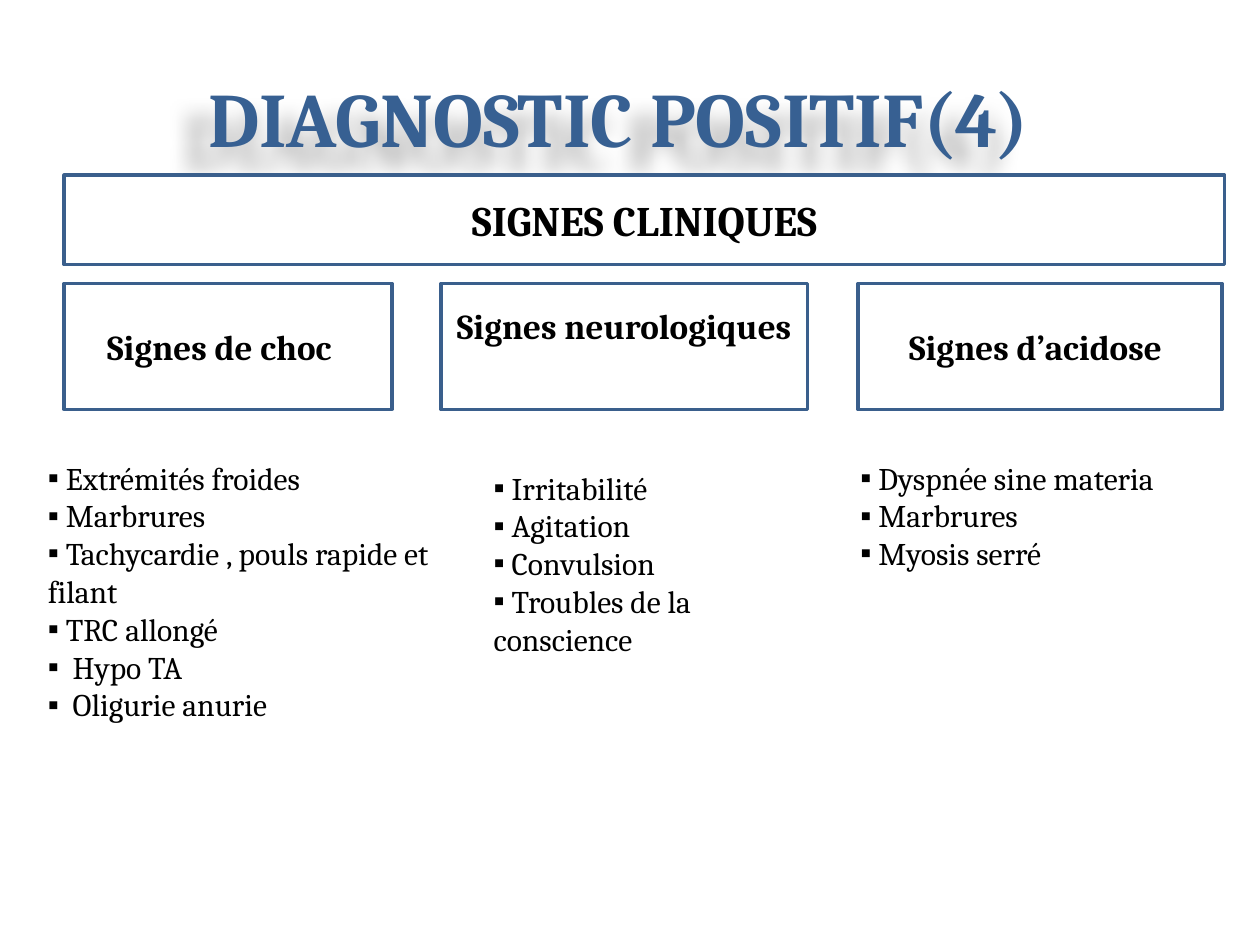
from dataclasses import dataclass

from lxml.etree import SubElement
from pptx import Presentation
from pptx.dml.color import RGBColor
from pptx.enum.shapes import MSO_SHAPE
from pptx.enum.text import MSO_ANCHOR, PP_ALIGN
from pptx.oxml.ns import qn
from pptx.util import Pt


@dataclass(frozen=True)
class Theme:
    font: str = "Cambria"
    title_color: RGBColor = RGBColor(0x37, 0x60, 0x92)
    line_color: RGBColor = RGBColor(0x3A, 0x5F, 0x8C)
    text_color: RGBColor = RGBColor(0, 0, 0)
    fill_color: RGBColor = RGBColor(255, 255, 255)
    title_size: int = 44
    banner_size: int = 24
    heading_size: int = 20
    body_size: int = 18
    line_width: int = 2


THEME = Theme()

# Each column: heading, heading box (left, width), extra insets (right, bottom),
# list box (left, top, width, height), list items
COLUMNS = [
    ("Signes de choc", (36.7, 187.2), (9.7, 0), (20.2, 258.5, 238.3, 159.8),
     [" Extrémités froides", " Marbrures", " Tachycardie , pouls rapide et filant",
      " TRC allongé", "  Hypo TA", "  Oligurie anurie"]),
    ("Signes neurologiques", (252, 209.5), (0, 23.4), (275, 264.2, 175.7, 116.6),
     [" Irritabilité", " Agitation", " Convulsion", " Troubles de la conscience"]),
    ("Signes d’acidose", (490.3, 208.1), (5, 0), (484.6, 258.5, 221, 72.7),
     [" Dyspnée sine materia", " Marbrures", " Myosis serré"]),
]
HEADING_TOP, HEADING_HEIGHT = 162, 72


def write_text(shape, lines, size, color=THEME.text_color, bold=False,
               align=PP_ALIGN.LEFT, anchor=MSO_ANCHOR.TOP, bullet=None,
               extra_right=0, extra_bottom=0):
    """Fill a shape with one paragraph per line."""
    frame = shape.text_frame
    frame.word_wrap = True
    frame.vertical_anchor = anchor
    frame.margin_right = Pt(7.2 + extra_right)
    frame.margin_bottom = Pt(3.6 + extra_bottom)
    for index, line in enumerate(lines):
        paragraph = frame.paragraphs[0] if index == 0 else frame.add_paragraph()
        paragraph.alignment = align
        run = paragraph.add_run()
        run.text = line
        run.font.name = THEME.font
        run.font.size = Pt(size)
        run.font.bold = bold
        run.font.color.rgb = color
        if bullet:
            properties = paragraph._p.get_or_add_pPr()
            SubElement(properties, qn("a:buFont"), typeface="Arial")
            SubElement(properties, qn("a:buChar"), char=bullet)


def add_text_box(slide, box):
    return slide.shapes.add_textbox(*map(Pt, box))


def add_soft_shadow(shape):
    """Cast a blurred shadow down and to the left."""
    effects = SubElement(shape._element.spPr, qn("a:effectLst"))
    shadow = SubElement(effects, qn("a:outerShdw"), blurRad=str(Pt(12)),
                        dist=str(Pt(18)), dir="8400000", algn="tr", rotWithShape="0")
    color = SubElement(shadow, qn("a:prstClr"), val="black")
    SubElement(color, qn("a:alpha"), val="30000")


def add_title(slide, box, text):
    title = add_text_box(slide, box)
    write_text(title, [text], THEME.title_size, color=THEME.title_color, bold=True,
               align=PP_ALIGN.CENTER, anchor=MSO_ANCHOR.MIDDLE, extra_right=12.5)
    add_soft_shadow(title)


def add_framed_heading(slide, box, text, size, extra_right=0, extra_bottom=0):
    frame = slide.shapes.add_shape(MSO_SHAPE.RECTANGLE, *map(Pt, box))
    frame.shadow.inherit = False
    frame.fill.solid()
    frame.fill.fore_color.rgb = THEME.fill_color
    frame.line.color.rgb = THEME.line_color
    frame.line.width = Pt(THEME.line_width)
    write_text(frame, [text], size, bold=True, align=PP_ALIGN.CENTER,
               anchor=MSO_ANCHOR.MIDDLE, extra_right=extra_right,
               extra_bottom=extra_bottom)


def add_sign_list(slide, box, items):
    write_text(add_text_box(slide, box), items, THEME.body_size, bullet="▪")


def build_slide(presentation):
    slide = presentation.slides.add_slide(presentation.slide_layouts[6])

    # Title and banner
    add_title(slide, (36, 21.6, 648, 90), "DIAGNOSTIC POSITIF(4)")
    add_framed_heading(slide, (36.7, 100.1, 663.1, 51.1), "SIGNES CLINIQUES",
                       THEME.banner_size)

    # Columns of signs
    for heading, (left, width), (right, bottom), list_box, items in COLUMNS:
        add_framed_heading(slide, (left, HEADING_TOP, width, HEADING_HEIGHT), heading,
                           THEME.heading_size, extra_right=right, extra_bottom=bottom)
        add_sign_list(slide, list_box, items)


def main():
    presentation = Presentation()
    presentation.slide_width = Pt(720)
    presentation.slide_height = Pt(540)
    build_slide(presentation)
    presentation.save("out.pptx")


if __name__ == "__main__":
    main()
